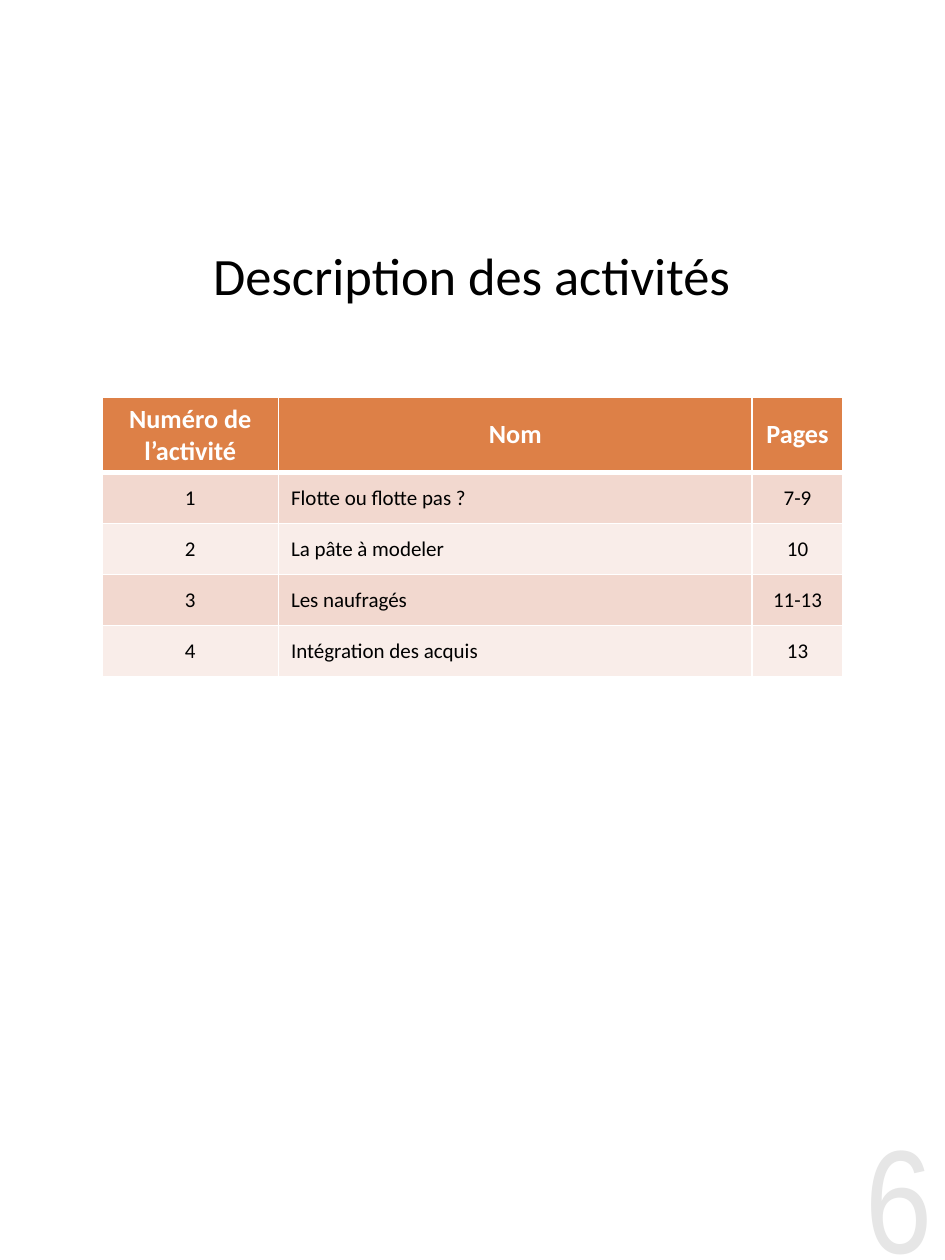
from typing import NamedTuple

from pptx import Presentation
from pptx.dml.color import RGBColor
from pptx.enum.text import MSO_ANCHOR as Anchor, PP_ALIGN as Align
from pptx.oxml import parse_xml
from pptx.oxml.ns import nsdecls
from pptx.util import Inches, Pt

COLORS = {
    "white": "FFFFFF",
    "black": "000000",
    "header": "DD8047",
    "odd_row": "F2D8CF",
    "even_row": "F9EDE9",
    "page_number": "E6E6E6",
}


class TextStyle(NamedTuple):
    size: float
    color: str
    bold: bool = False
    font: str = "Calibri"


class Column(NamedTuple):
    heading: str
    width: float
    align: Align


class Activity(NamedTuple):
    number: str
    name: str
    pages: str


TITLE = TextStyle(30, "black")
HEADING = TextStyle(15, "white", bold=True)
BODY = TextStyle(12, "black")
PAGE_NUMBER = TextStyle(84, "page_number", font="Arial Narrow")

COLUMNS = [
    Column("Numéro de\nl’activité", 1.4, Align.CENTER),
    Column("Nom", 3.76, Align.LEFT),
    Column("Pages", 0.72, Align.CENTER),
]
ACTIVITIES = [
    Activity("1", "Flotte ou flotte pas ?", "7-9"),
    Activity("2", "La pâte à modeler", "10"),
    Activity("3", "Les naufragés", "11-13"),
    Activity("4", "Intégration des acquis", "13"),
]
HEADER_HEIGHT, ROW_HEIGHT = 0.6, 0.405


def write(frame, text: str, style: TextStyle, align: Align) -> None:
    """Write each line of the text as its own paragraph."""
    for index, line in enumerate(text.split("\n")):
        paragraph = frame.add_paragraph() if index else frame.paragraphs[0]
        paragraph.alignment = align
        run = paragraph.add_run()
        run.text = line
        run.font.name = style.font
        run.font.size = Pt(style.size)
        run.font.bold = style.bold
        run.font.color.rgb = RGBColor.from_string(COLORS[style.color])


def add_text(slide, box: tuple, text: str, style: TextStyle, align: Align,
             anchor: Anchor, margin: float) -> None:
    frame = slide.shapes.add_textbox(*map(Inches, box)).text_frame
    frame.word_wrap = True
    frame.vertical_anchor = anchor
    frame.margin_left = frame.margin_right = Inches(margin)
    frame.margin_top = frame.margin_bottom = Inches(margin / 2)
    write(frame, text, style, align)


def set_borders(cell, top: float, bottom: float) -> None:
    """Give the cell white borders, 1 pt at the sides; they precede the fill."""
    widths = {"lnL": 1, "lnR": 1, "lnT": top, "lnB": bottom}
    properties = cell._tc.get_or_add_tcPr()
    for position, (side, width) in enumerate(widths.items()):
        properties.insert(position, parse_xml(
            f'<a:{side} {nsdecls("a")} w="{Pt(width)}"><a:solidFill>'
            f'<a:srgbClr val="{COLORS["white"]}"/></a:solidFill></a:{side}>'))


def fill_cell(cell, text: str, style: TextStyle, align: Align, fill: str,
              top: float = 1, bottom: float = 1) -> None:
    cell.vertical_anchor = Anchor.MIDDLE
    cell.fill.solid()
    cell.fill.fore_color.rgb = RGBColor.from_string(COLORS[fill])
    set_borders(cell, top, bottom)
    write(cell.text_frame, text, style, align)


def add_activity_table(slide, left: float, top: float) -> None:
    width = sum(column.width for column in COLUMNS)
    height = HEADER_HEIGHT + ROW_HEIGHT * len(ACTIVITIES)
    table = slide.shapes.add_table(
        len(ACTIVITIES) + 1, len(COLUMNS),
        Inches(left), Inches(top), Inches(width), Inches(height)).table
    for index, row in enumerate(table.rows):
        row.height = Inches(ROW_HEIGHT if index else HEADER_HEIGHT)
    for c, column in enumerate(COLUMNS):
        table.columns[c].width = Inches(column.width)
        fill_cell(table.cell(0, c), column.heading, HEADING, Align.CENTER,
                  "header", bottom=3)
        for r, activity in enumerate(ACTIVITIES, start=1):
            fill_cell(table.cell(r, c), activity[c], BODY, column.align,
                      "odd_row" if r % 2 else "even_row",
                      top=3 if r == 1 else 1)


def main() -> None:
    deck = Presentation()
    deck.slide_width, deck.slide_height = Inches(7.5), Inches(10)
    slide = deck.slides.add_slide(deck.slide_layouts[6])
    add_text(slide, (0.68, 1.73, 6.13, 0.9), "Description des activités",
             TITLE, Align.CENTER, Anchor.MIDDLE, 0.1)
    add_activity_table(slide, 0.81, 3.15)
    add_text(slide, (6.4, 8.78, 1, 1.2), "6",
             PAGE_NUMBER, Align.RIGHT, Anchor.TOP, 0)
    deck.save("out.pptx")


if __name__ == "__main__":
    main()
